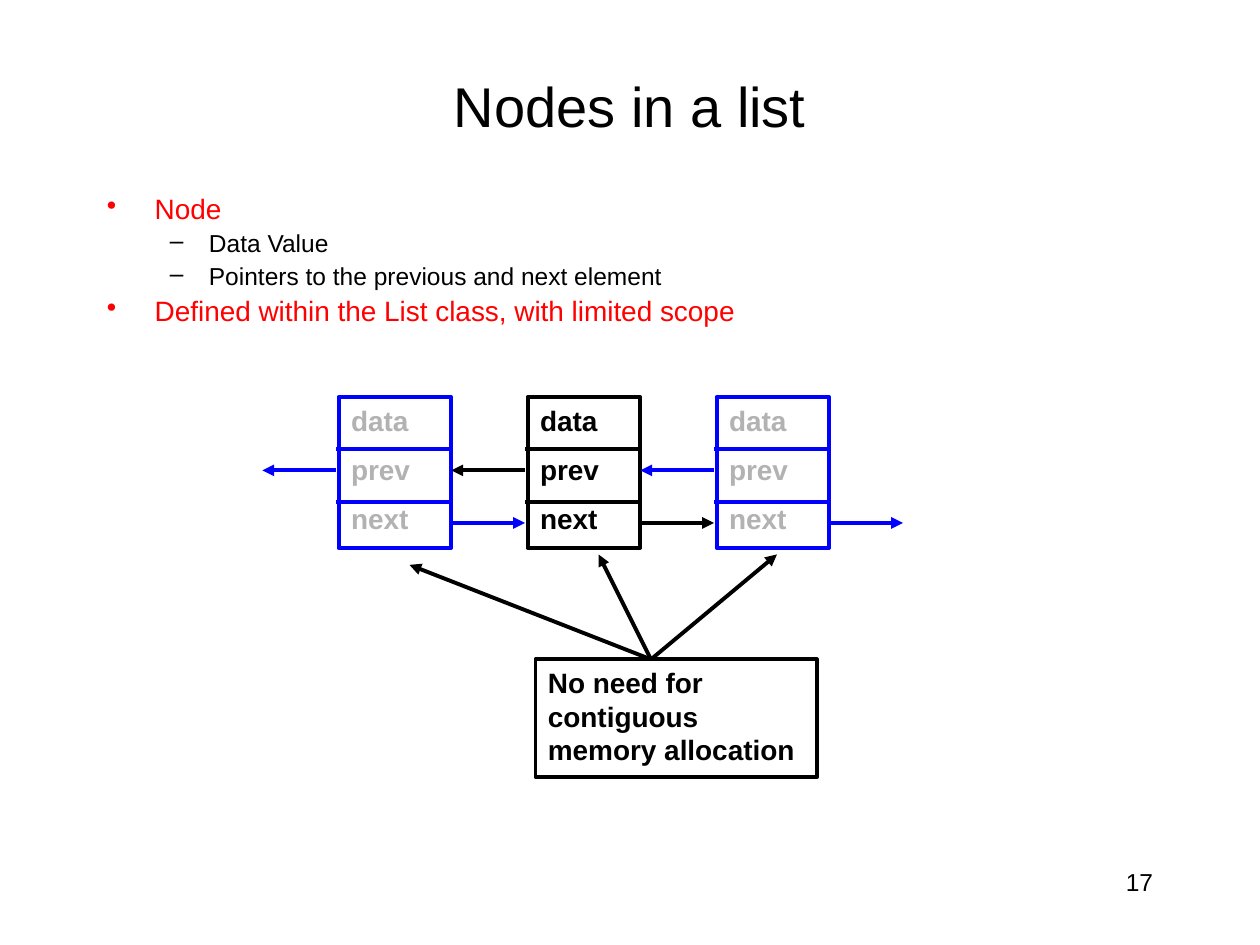
from lxml import etree
from pptx import Presentation
from pptx.dml.color import RGBColor
from pptx.enum.shapes import MSO_CONNECTOR, MSO_SHAPE
from pptx.enum.text import MSO_ANCHOR, PP_ALIGN
from pptx.oxml.ns import qn
from pptx.util import Inches, Pt

LEFT, CENTER, RIGHT = PP_ALIGN.LEFT, PP_ALIGN.CENTER, PP_ALIGN.RIGHT
TOP, MIDDLE = MSO_ANCHOR.TOP, MSO_ANCHOR.MIDDLE
RECTANGLE, STRAIGHT = MSO_SHAPE.RECTANGLE, MSO_CONNECTOR.STRAIGHT

BLACK, BLUE, RED, GRAY = "000000", "0000FF", "FF0000", "B2B2B2"
COLUMNS = 120  # square grid: 120 columns by 90 rows


def rgb(value):
    return RGBColor.from_string(value)


class ListSlide:
    font = "Arial"
    line_width = Pt(2.25)
    # level: size, colour, bullet, text margin, hanging indent (inches)
    levels = {0: (16, RED, "•", 0.38, 0.38), 1: (14, BLACK, "–", 0.81, 0.31)}

    def __init__(self, deck):
        self.slide = deck.slides.add_slide(deck.slide_layouts[6])
        self.unit = deck.slide_width / COLUMNS

    def grid(self, *cells):
        return [round(cell * self.unit) for cell in cells]

    def format(self, paragraph, size, color, bold=False):
        for run in paragraph.runs:
            run.font.name = self.font
            run.font.size = Pt(size)
            run.font.bold = bold
            run.font.color.rgb = rgb(color)

    def text(self, place, wording, size, align=LEFT, anchor=TOP):
        frame = self.slide.shapes.add_textbox(*self.grid(*place)).text_frame
        frame.word_wrap = True
        frame.vertical_anchor = anchor
        frame.text = wording
        frame.paragraphs[0].alignment = align
        self.format(frame.paragraphs[0], size, BLACK)

    def bullets(self, place, items):
        frame = self.slide.shapes.add_textbox(*self.grid(*place)).text_frame
        frame.word_wrap = True
        frame.text = "\n".join(wording for _, wording in items)
        for paragraph, (level, _) in zip(frame.paragraphs, items):
            size, color, mark, margin, hanging = self.levels[level]
            paragraph.level = level
            paragraph.line_spacing = 0.9
            paragraph.space_before = Pt(3.6)
            self.format(paragraph, size, color)
            properties = paragraph._p.get_or_add_pPr()
            properties.set("marL", str(Inches(margin)))
            properties.set("indent", str(-Inches(hanging)))
            etree.SubElement(properties, qn("a:buChar"), char=mark)

    def box(self, place, lines, line_color, text_color):
        box = self.slide.shapes.add_shape(RECTANGLE, *self.grid(*place))
        box.shadow.inherit = False
        box.fill.background()
        box.line.color.rgb = rgb(line_color)
        box.line.width = self.line_width
        frame = box.text_frame
        frame.word_wrap = True
        frame.vertical_anchor = TOP
        frame.text = "\n".join(lines)
        for index, paragraph in enumerate(frame.paragraphs):
            paragraph.alignment = LEFT
            paragraph.space_before = Pt(9 if index else 0)
            self.format(paragraph, 16, text_color, bold=True)

    def line(self, start, end, color, arrow=False):
        line = self.slide.shapes.add_connector(STRAIGHT, *self.grid(*start, *end))
        line.line.color.rgb = rgb(color)
        line.line.width = self.line_width
        if arrow:
            etree.SubElement(line.line._get_or_add_ln(), qn("a:tailEnd"), type="triangle")
        etree.SubElement(line._element.spPr, qn("a:effectLst"))

    def node(self, left, line_color, text_color):
        top, width, reach = 37.8, 11, 7
        right = left + width
        self.box((left + 0.25, top, width - 0.3, 14.4),
                 ("data", "prev", "next"), line_color, text_color)
        for divider in (top + 5, top + 10):
            self.line((left, divider), (right, divider), line_color)
        # Links to the neighbouring nodes
        prev_row, next_row = top + 7, top + 12
        self.line((left, prev_row), (left - reach, prev_row), line_color, arrow=True)
        self.line((right, next_row), (right + reach, next_row), line_color, arrow=True)


def main():
    deck = Presentation()
    deck.slide_width, deck.slide_height = Inches(10), Inches(7.5)
    page = ListSlide(deck)

    # Title, bullet list and page number
    page.text((9, 5, 102, 10), "Nodes in a list", 32, CENTER, MIDDLE)
    page.bullets((9, 18, 100.3, 17), [
        (0, "Node"),
        (1, "Data Value"),
        (1, "Pointers to the previous and next element"),
        (0, "Defined within the List class, with limited scope"),
    ])
    page.text((86, 82, 25, 6), "17", 14, RIGHT)

    # Three linked nodes, the current one in black
    colors = [(BLUE, GRAY), (BLACK, BLACK), (BLUE, GRAY)]
    for index, (line_color, text_color) in enumerate(colors):
        page.node(32 + 18 * index, line_color, text_color)

    # Remark pointing at every node
    remark_top = 62.8
    page.box((51, remark_top, 26.8, 11.2),
             ["No need for contiguous memory allocation"], BLACK, BLACK)
    for target in ((39, 53.8), (57, 52.8), (74, 52.8)):
        page.line((62, remark_top), target, BLACK, arrow=True)

    deck.save("out.pptx")


if __name__ == "__main__":
    main()
